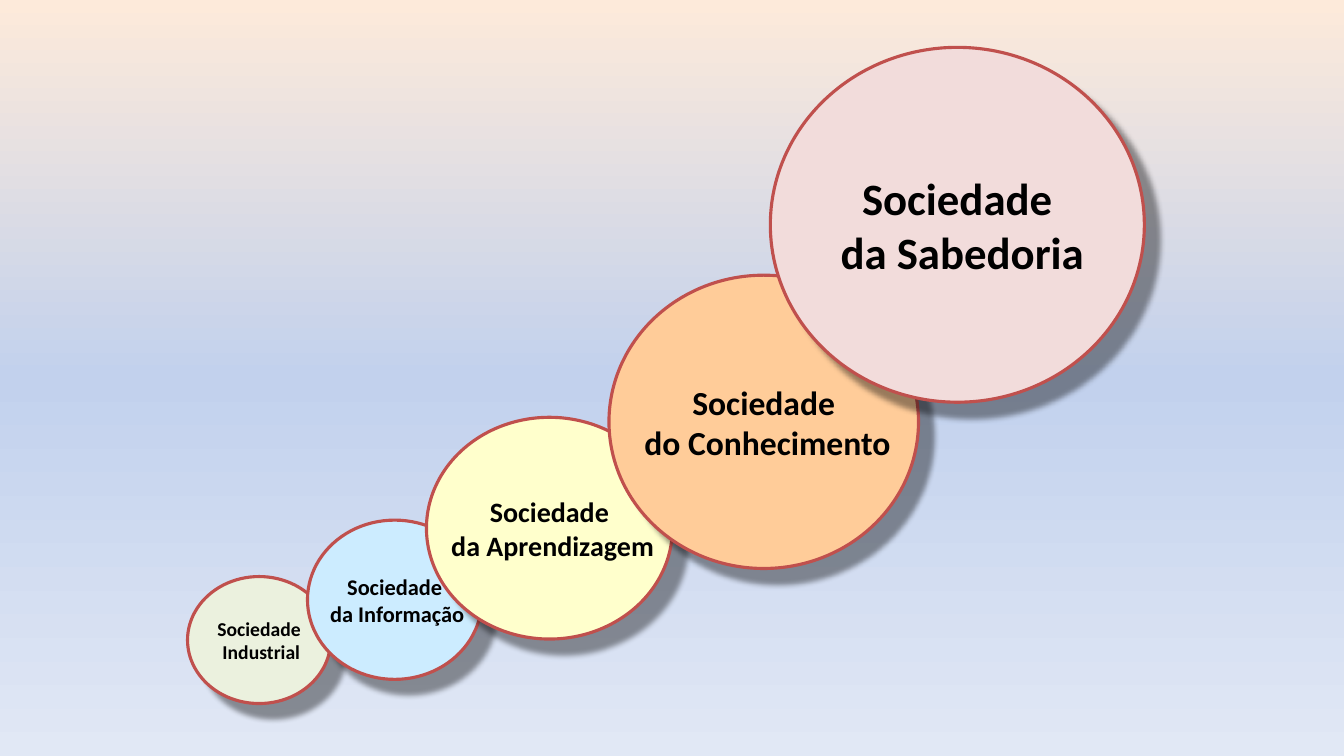
from dataclasses import dataclass

from lxml import etree
from pptx import Presentation, util as u
from pptx.dml.color import RGBColor
from pptx.enum import shapes, text
from pptx.oxml.ns import qn


@dataclass(frozen=True)
class Theme:
    font: str = "Calibri"
    ink: str = "000000"
    outline: str = "C0504D"
    outline_width: float = 2.25
    shadow: str = "000000"
    sky: tuple = ((0, "FDEADA"), (50, "C2D1ED"), (100, "E1E8F5"))
    fills: tuple = ("EBF1DE", "CCECFF", "FFFFCC", "FFCC99", "F2DCDB")
    sizes: tuple = (14, 16, 20, 24, 32)


def add_node(parent, tag, **attributes):
    return etree.SubElement(parent, qn(tag), attributes)


class SlideBuilder:
    def __init__(self, page, theme):
        self.page = page
        self.theme = theme

    def background(self):
        fill = self.page.background.fill
        fill.gradient()
        fill.gradient_angle = 270  # counter-clockwise: top to bottom
        stops = self.page.element.find(".//" + qn("a:gsLst"))
        for stop in list(stops):
            stops.remove(stop)
        for percent, color in self.theme.sky:
            stop = add_node(stops, "a:gs", pos=str(percent * 1000))
            add_node(stop, "a:srgbClr", val=color)

    def drop_shadow(self, shape):
        shape.shadow.inherit = False
        effects = shape.element.spPr.find(qn("a:effectLst"))
        shadow = add_node(effects, "a:outerShdw", blurRad=str(u.Pt(4)),
                          dist=str(u.Pt(14)), dir=str(45 * 60000),
                          algn="tl", rotWithShape="0")
        color = add_node(shadow, "a:srgbClr", val=self.theme.shadow)
        add_node(color, "a:alpha", val="40000")

    def circle(self, place, fill, size, lines):
        shape = self.page.shapes.add_shape(
            shapes.MSO_SHAPE.OVAL, *map(u.Inches, place))
        shape.fill.solid()
        shape.fill.fore_color.rgb = RGBColor.from_string(fill)
        shape.line.color.rgb = RGBColor.from_string(self.theme.outline)
        shape.line.width = u.Pt(self.theme.outline_width)
        self.drop_shadow(shape)
        self.label(shape.text_frame, size, lines)

    def label(self, frame, size, lines):
        frame.word_wrap = False
        frame.vertical_anchor = text.MSO_ANCHOR.MIDDLE
        style = {"name": self.theme.font, "size": u.Pt(size), "bold": True}
        for index, line in enumerate(lines):
            para = frame.add_paragraph() if index else frame.paragraphs[0]
            para.alignment = text.PP_ALIGN.CENTER
            span = para.add_run()
            span.text = line
            for name, value in style.items():
                setattr(span.font, name, value)
            span.font.color.rgb = RGBColor.from_string(self.theme.ink)


# Societies from earliest to latest: name and left, top, width, height
SOCIETIES = (
    (" Industrial", (1.86, 5.72, 1.42, 1.26)),
    (" da Informação", (3.05, 5.16, 1.73, 1.58)),
    (" da Aprendizagem", (4.23, 4.14, 2.44, 2.2)),
    (" do Conhecimento", (6.04, 2.73, 3.07, 2.91)),
    (" da Sabedoria", (7.64, 0.47, 3.71, 3.52)),
)


def main():
    theme = Theme()
    deck = Presentation()
    deck.slide_width, deck.slide_height = u.Inches(13.33), u.Inches(7.5)
    blank_layout = deck.slide_layouts[6]
    builder = SlideBuilder(deck.slides.add_slide(blank_layout), theme)

    # Background
    builder.background()

    # Rising chain of circles
    for (name, place), fill, size in zip(SOCIETIES, theme.fills, theme.sizes):
        builder.circle(place, fill, size, ("Sociedade", name))

    deck.save("out.pptx")


if __name__ == "__main__":
    main()
